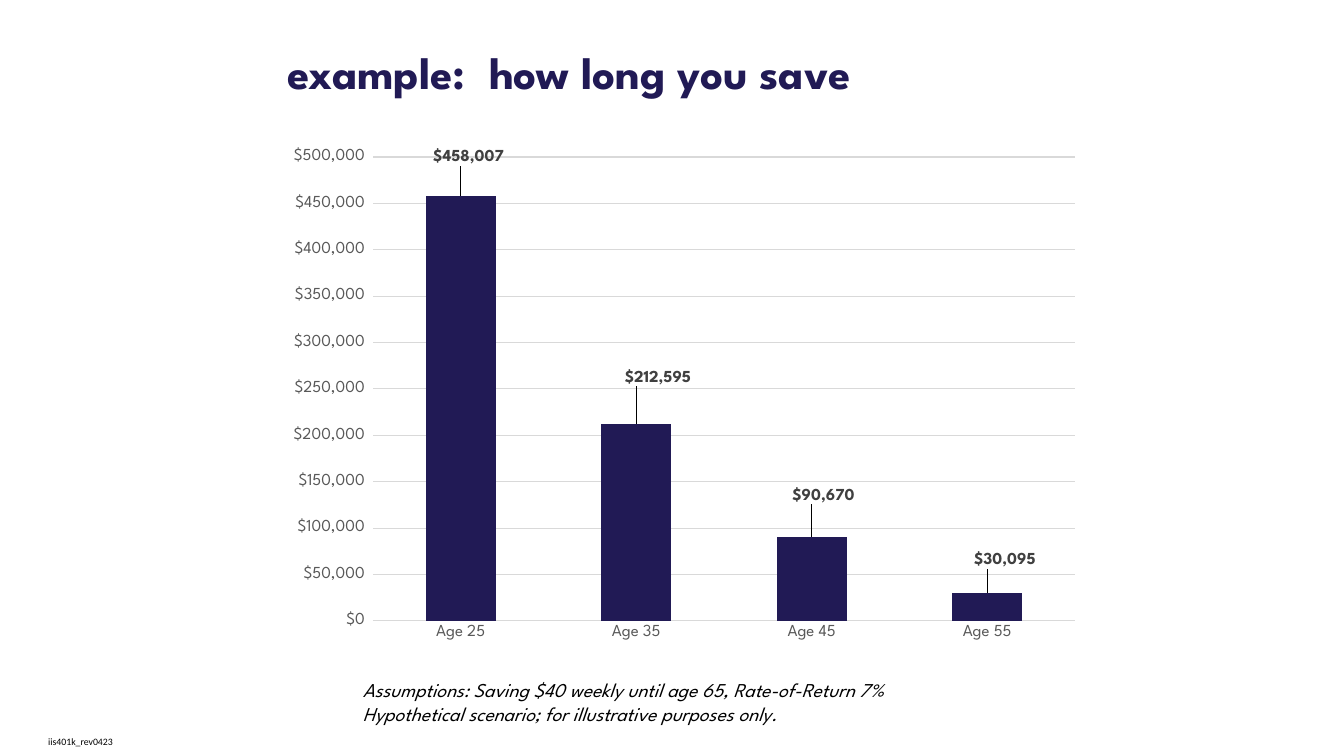
"""Build a slide that charts savings at retirement by starting age."""
from lxml import etree
from pptx import Presentation
from pptx.chart.data import CategoryChartData
from pptx.dml.color import RGBColor
from pptx.enum.chart import XL_CHART_TYPE, XL_LABEL_POSITION, XL_TICK_MARK
from pptx.enum.text import MSO_ANCHOR, MSO_AUTO_SIZE, PP_ALIGN
from pptx.oxml.ns import qn
from pptx.util import Pt

COLUMNS = XL_CHART_TYPE.COLUMN_CLUSTERED
OUTSIDE_END = XL_LABEL_POSITION.OUTSIDE_END
NO_TICK = XL_TICK_MARK.NONE
TOP, MIDDLE = MSO_ANCHOR.TOP, MSO_ANCHOR.MIDDLE
LEFT, CENTER = PP_ALIGN.LEFT, PP_ALIGN.CENTER
NO_FIT = MSO_AUTO_SIZE.NONE

PX = 914400 / 100.8
SLIDE_SIZE = (1344, 756)
HEADING_FONT, SMALL_FONT = "League Spartan", "Calibri"
NAVY, BLACK, AXIS_GRAY, LABEL_GRAY, GRID_GRAY = "211A55", "000000", "595959", "404040", "D9D9D9"
DOLLARS = '"$"#,##0_);[Red]\\("$"#,##0\\)'

TITLE = ["example:  how long you save"]
TITLE_BOX = (277, 40, 848, 65)
ASSUMPTIONS = [
    "Assumptions: Saving $40 weekly until age 65, Rate-of-Return 7%",
    "Hypothetical scenario; for illustrative purposes only.",
]
ASSUMPTIONS_BOX = (353, 673, 991, 89)
FORM_CODE = ["iis401k_rev0423"]
FORM_CODE_BOX = (28, 726, 105, 31)

CHART_BOX = (277, 139, 813, 512)
PLOT_BOX = (96, 18, 702, 464)
SAVINGS = [
    ("Age 25", 458007, (10, -26)),
    ("Age 35", 212595, (24, -33)),
    ("Age 45", 90670, (14, -28)),
    ("Age 55", 30095, (20, -20)),
]


def emu(*lengths):
    return [round(length * PX) for length in lengths]


def color(hex_code):
    return RGBColor.from_string(hex_code)


def style(font, size, hex_code, name=HEADING_FONT, bold=False, italic=False):
    font.size, font.name, font.bold, font.italic = Pt(size), name, bold, italic
    font.color.rgb = color(hex_code)


def write(box, lines, anchor=TOP, align=LEFT, **look):
    frame = box.text_frame
    frame.word_wrap, frame.auto_size, frame.vertical_anchor = True, NO_FIT, anchor
    for index, line in enumerate(lines):
        para = frame.add_paragraph() if index else frame.paragraphs[0]
        para.alignment = align
        span = para.add_run()
        span.text = line
        style(span.font, **look)


def chart_layout(parts):
    layout = etree.Element(qn("c:layout"))
    manual = etree.SubElement(layout, qn("c:manualLayout"))
    for tag, value in parts:
        etree.SubElement(manual, qn(f"c:{tag}")).set("val", str(value))
    return layout


def place_plot(chart):
    area = chart._chartSpace.chart.plotArea
    for old in area.findall(qn("c:layout")):
        area.remove(old)
    x, y, width, height = PLOT_BOX
    area.insert(0, chart_layout([
        ("layoutTarget", "inner"), ("xMode", "edge"), ("yMode", "edge"),
        ("x", round(x / CHART_BOX[2], 4)), ("y", round(y / CHART_BOX[3], 4)),
        ("w", round(width / CHART_BOX[2], 4)), ("h", round(height / CHART_BOX[3], 4)),
    ]))


def format_axes(chart):
    for axis in (chart.category_axis, chart.value_axis):
        axis.major_tick_mark = axis.minor_tick_mark = NO_TICK
        style(axis.tick_labels.font, 12, AXIS_GRAY)
    values, ages = chart.value_axis, chart.category_axis
    values.minimum_scale, values.maximum_scale, values.major_unit = 0, 500000, 50000
    values.tick_labels.number_format = DOLLARS
    values.tick_labels.number_format_is_linked = False
    values.format.line.fill.background()
    ages.has_major_gridlines = False
    for line in (values.major_gridlines.format.line, ages.format.line):
        line.color.rgb, line.width = color(GRID_GRAY), Pt(0.75)


def format_labels(plot, series):
    plot.has_data_labels = True
    for labels in (plot.data_labels, series.data_labels):
        labels.show_value, labels.position = True, OUTSIDE_END
        labels.number_format, labels.number_format_is_linked = DOLLARS, False
        style(labels.font, 12, LABEL_GRAY, bold=True)
    for index, (_, _, (shift_x, shift_y)) in enumerate(SAVINGS):
        label = series.points[index].data_label
        style(label.font, 12, LABEL_GRAY, bold=True)
        label.position = OUTSIDE_END
        element = series.data_labels._element.findall(qn("c:dLbl"))[index]
        element.insert(1, chart_layout([
            ("x", round(shift_x / CHART_BOX[2], 4)), ("y", round(shift_y / CHART_BOX[3], 4)),
        ]))


def add_savings_chart(page):
    data = CategoryChartData(number_format=DOLLARS)
    data.categories = [age for age, _, _ in SAVINGS]
    data.add_series("Series 1", [value for _, value, _ in SAVINGS])
    chart = page.shapes.add_chart(COLUMNS, *emu(*CHART_BOX), data).chart
    chart.has_title = chart.has_legend = False
    style(chart.font, 10, BLACK, SMALL_FONT)
    plot = chart.plots[0]
    plot.gap_width, plot.vary_by_categories = 150, False
    series = plot.series[0]
    series.format.fill.solid()
    series.format.fill.fore_color.rgb = color(NAVY)
    format_axes(chart)
    format_labels(plot, series)
    place_plot(chart)


def main():
    deck = Presentation()
    deck.slide_width, deck.slide_height = emu(*SLIDE_SIZE)
    page = deck.slides.add_slide(deck.slide_layouts[5])
    title = page.shapes.title
    title.left, title.top, title.width, title.height = emu(*TITLE_BOX)
    write(title, TITLE, size=32, hex_code=NAVY, bold=True)
    assumptions = page.shapes.add_textbox(*emu(*ASSUMPTIONS_BOX))
    write(assumptions, ASSUMPTIONS, size=14, hex_code=BLACK, italic=True)
    add_savings_chart(page)
    form_code = page.shapes.add_textbox(*emu(*FORM_CODE_BOX))
    write(form_code, FORM_CODE, MIDDLE, CENTER, size=7, hex_code=BLACK, name=SMALL_FONT)
    deck.save("out.pptx")


if __name__ == "__main__":
    main()
